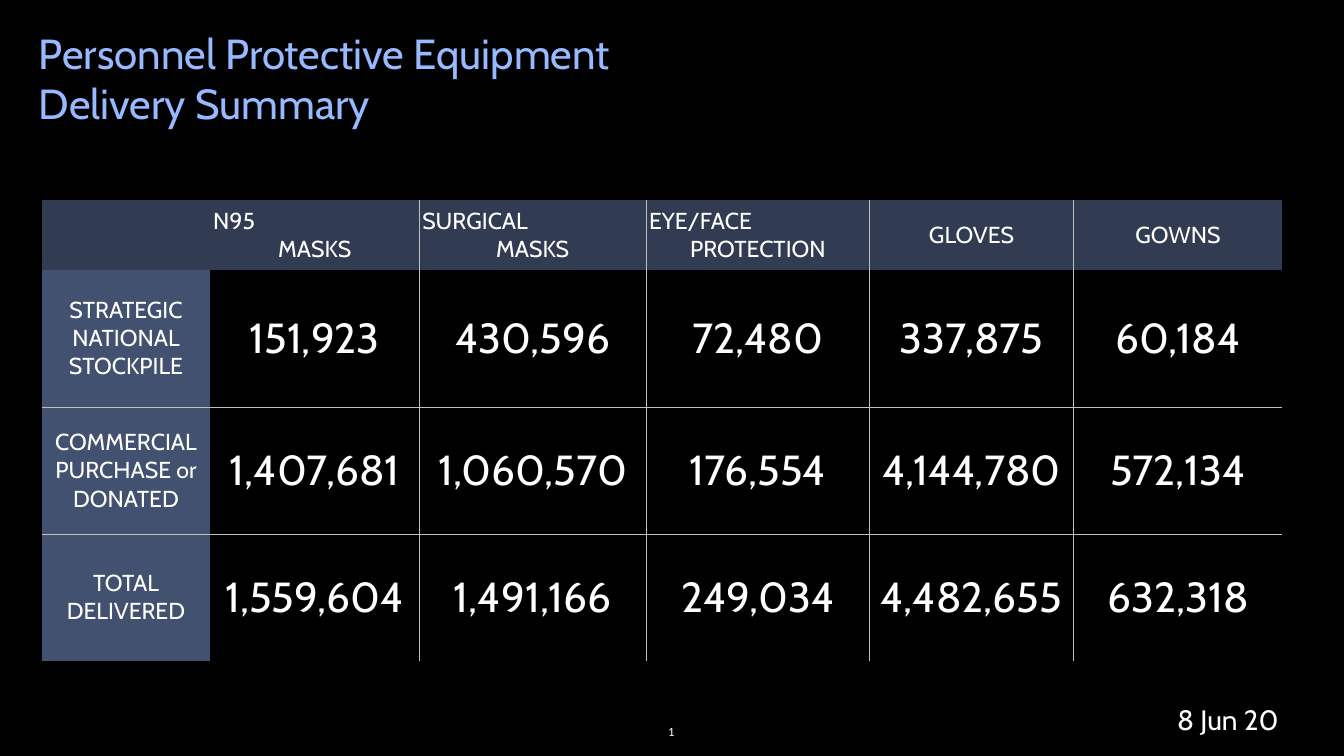
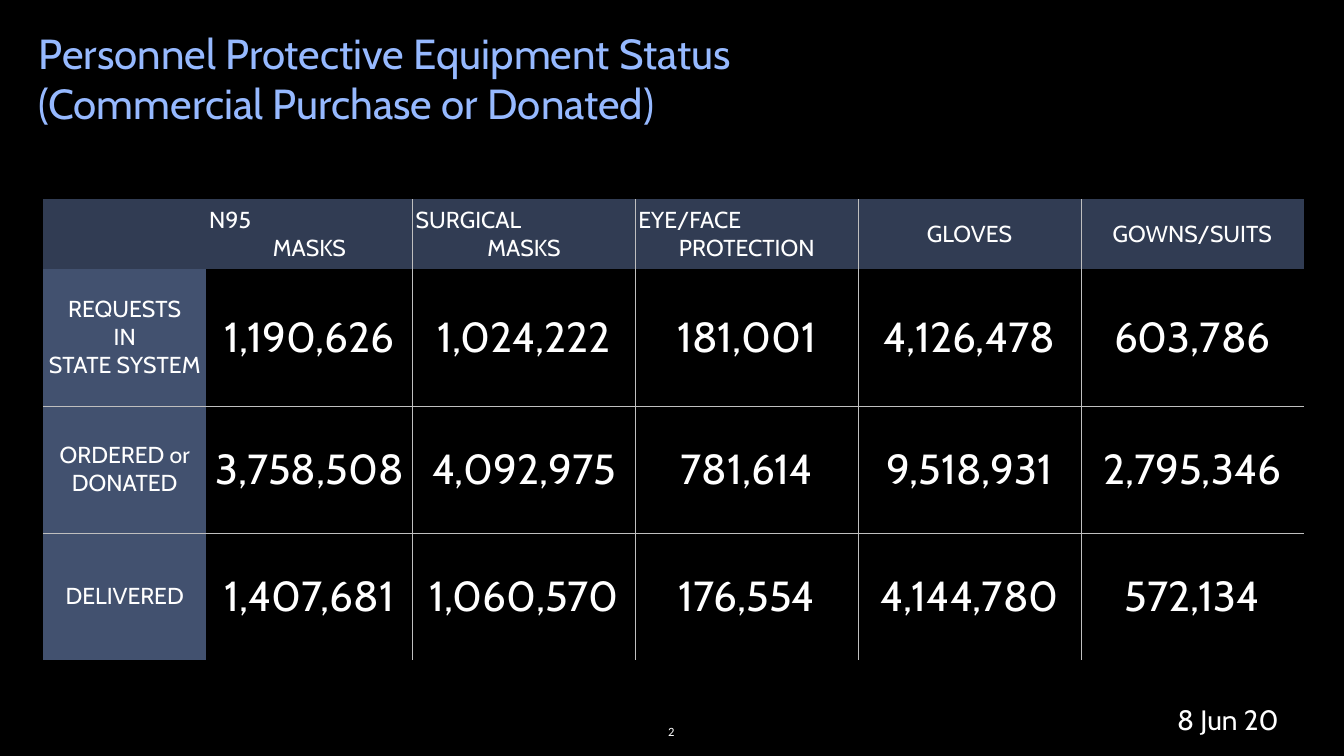
"""Build the two protective equipment table slides."""
from dataclasses import dataclass

import lxml.etree
import pptx
import pptx.dml.color
import pptx.enum.text
import pptx.oxml.ns
import pptx.util

Inches = pptx.util.Inches
Align = pptx.enum.text.PP_ALIGN
Anchor = pptx.enum.text.MSO_ANCHOR
qn = pptx.oxml.ns.qn


@dataclass(frozen=True)
class Theme:
    background: str = "000000"
    title: str = "96B9FF"
    text: str = "FFFFFF"
    header: str = "313C53"
    label: str = "42516F"
    label_alpha: int = 25
    rule: str = "BFBFBF"
    font: str = "Cabin"
    number_font: str = "Calibri"
    title_size: int = 60
    figure_size: int = 60
    date_size: int = 40
    label_size: int = 33
    number_size: int = 18
    rule_width: float = 1
    inset: float = 0.06


@dataclass(frozen=True)
class Box:
    left: float
    top: float
    width: float
    height: float

    def lengths(self) -> tuple:
        return tuple(Inches(v) for v in (self.left, self.top, self.width, self.height))


@dataclass(frozen=True)
class EquipmentSlide:
    title: str
    left: float
    top: float
    columns: tuple
    headers: tuple
    rows: tuple


THEME = Theme()
TITLE_BOX = Box(0.71, 0.48, 15.36, 2.5)
DATE_BOX = Box(23.3, 13.59, 2.56, 1.35)
NUMBER_BOX = Box(13.12, 14.31, 0.4, 0.41)
ROW_HEIGHTS = (1.38, 2.73, 2.52, 2.52)
DATE = "8 Jun 20"
NO_STYLE = "{2D5ABB26-0587-4C30-8999-92F81FD0307C}"
SHARED_HEADERS = ("", "N95\nMASKS", "SURGICAL\nMASKS", "EYE/FACE\nPROTECTION", "GLOVES")
COMMERCIAL_DELIVERED = ("1,407,681", "1,060,570", "176,554", "4,144,780", "572,134")

SLIDES = (
    EquipmentSlide(
        "Personnel Protective Equipment\vDelivery Summary",
        0.83, 3.97, (3.34, 4.15, 4.5, 4.44, 4.04, 4.15),
        SHARED_HEADERS + ("GOWNS",),
        (
            ("STRATEGIC NATIONAL STOCKPILE",
             "151,923", "430,596", "72,480", "337,875", "60,184"),
            ("COMMERCIAL\nPURCHASE or\nDONATED",) + COMMERCIAL_DELIVERED,
            ("TOTAL DELIVERED",
             "1,559,604", "1,491,166", "249,034", "4,482,655", "632,318"),
        ),
    ),
    EquipmentSlide(
        "Personnel Protective Equipment Status (Commercial Purchase or Donated)",
        0.86, 3.95, (3.23, 4.1) + (4.42,) * 4,
        SHARED_HEADERS + ("GOWNS/SUITS",),
        (
            ("REQUESTS\nIN\nSTATE SYSTEM",
             "1,190,626", "1,024,222", "181,001", "4,126,478", "603,786"),
            ("ORDERED or DONATED",
             "3,758,508", "4,092,975", "781,614", "9,518,931", "2,795,346"),
            ("DELIVERED",) + COMMERCIAL_DELIVERED,
        ),
    ),
)


def rgb(color: str) -> pptx.dml.color.RGBColor:
    return pptx.dml.color.RGBColor.from_string(color)


def set_insets(target) -> None:
    inset = Inches(THEME.inset)
    target.margin_left = target.margin_right = inset
    target.margin_top = target.margin_bottom = inset


def style_text(tf, size: int, align: Align, color: str = THEME.text,
               font: str = THEME.font) -> None:
    for p in tf.paragraphs:
        p.alignment = align
        for r in p.runs:
            r.font.size = pptx.util.Pt(size)
            r.font.name = font
            r.font.bold = False
            r.font.color.rgb = rgb(color)


def add_text(slide, box: Box, text: str, size: int, anchor: Anchor,
             color: str = THEME.text, font: str = THEME.font,
             align: Align = Align.LEFT, wrap: bool = True):
    tf = slide.shapes.add_textbox(*box.lengths()).text_frame
    tf.word_wrap = wrap
    tf.vertical_anchor = anchor
    set_insets(tf)
    tf.text = text
    style_text(tf, size, align, color, font)
    return tf


def add_slide_number(slide, number: int) -> None:
    tf = add_text(slide, NUMBER_BOX, str(number), THEME.number_size, Anchor.BOTTOM,
                  font=THEME.number_font, align=Align.CENTER, wrap=False)
    run = tf.paragraphs[0].runs[0]._r
    run.tag = qn("a:fld")
    run.set("id", "{B6F15528-21DE-4FAA-801E-634DDDAF4B2B}")
    run.set("type", "slidenum")


def set_borders(cell, ruled: set) -> None:
    tc_pr = cell._tc.get_or_add_tcPr()
    for side in "LRTB":
        ln = lxml.etree.SubElement(tc_pr, qn(f"a:ln{side}"))
        if side in ruled:
            ln.set("w", str(pptx.util.Pt(THEME.rule_width)))
            fill = lxml.etree.SubElement(ln, qn("a:solidFill"))
            lxml.etree.SubElement(fill, qn("a:srgbClr"), val=THEME.rule)
        else:
            ln.set("w", "0")
            lxml.etree.SubElement(ln, qn("a:noFill"))


def fill_cell(cell, row: int, col: int) -> None:
    if row and col:
        cell.fill.background()
        return
    cell.fill.solid()
    cell.fill.fore_color.rgb = rgb(THEME.label if row else THEME.header)
    if row:
        color = cell._tc.tcPr.find(".//" + qn("a:srgbClr"))
        lxml.etree.SubElement(color, qn("a:alpha"), val=str(THEME.label_alpha * 1000))


def add_equipment_table(slide, content: EquipmentSlide) -> None:
    cells = (content.headers,) + content.rows
    last_row, last_col = len(cells) - 1, len(content.columns) - 1
    box = Box(content.left, content.top, sum(content.columns), sum(ROW_HEIGHTS))
    table = slide.shapes.add_table(last_row + 1, last_col + 1, *box.lengths()).table
    table.horz_banding = table.first_row = False
    table._tbl.tblPr.find(qn("a:tableStyleId")).text = NO_STYLE
    for column, width in zip(table.columns, content.columns):
        column.width = Inches(width)
    for row, height in zip(table.rows, ROW_HEIGHTS):
        row.height = Inches(height)
    for i, values in enumerate(cells):
        for j, value in enumerate(values):
            cell = table.cell(i, j)
            rules = {"L": j > 1, "R": 0 < j < last_col,
                     "T": i > 1, "B": 0 < i < last_row}
            set_borders(cell, {side for side, shown in rules.items() if shown})
            fill_cell(cell, i, j)
            set_insets(cell)
            cell.vertical_anchor = Anchor.MIDDLE
            tf = cell.text_frame
            tf.text = value
            size = THEME.figure_size if i and j else THEME.label_size
            style_text(tf, size, Align.CENTER)
            if i == 0 and len(tf.paragraphs) > 1:
                tf.paragraphs[0].alignment = Align.LEFT


def add_equipment_slide(prs, content: EquipmentSlide, number: int) -> None:
    slide = prs.slides.add_slide(prs.slide_layouts[6])
    slide.background.fill.solid()
    slide.background.fill.fore_color.rgb = rgb(THEME.background)
    add_text(slide, TITLE_BOX, content.title, THEME.title_size, Anchor.TOP, THEME.title)
    add_equipment_table(slide, content)
    add_text(slide, DATE_BOX, DATE, THEME.date_size, Anchor.MIDDLE)
    add_slide_number(slide, number)


def main() -> None:
    prs = pptx.Presentation()
    prs.slide_width, prs.slide_height = Inches(26.67), Inches(15)
    for number, content in enumerate(SLIDES, start=1):
        add_equipment_slide(prs, content, number)
    prs.save("out.pptx")


if __name__ == "__main__":
    main()
